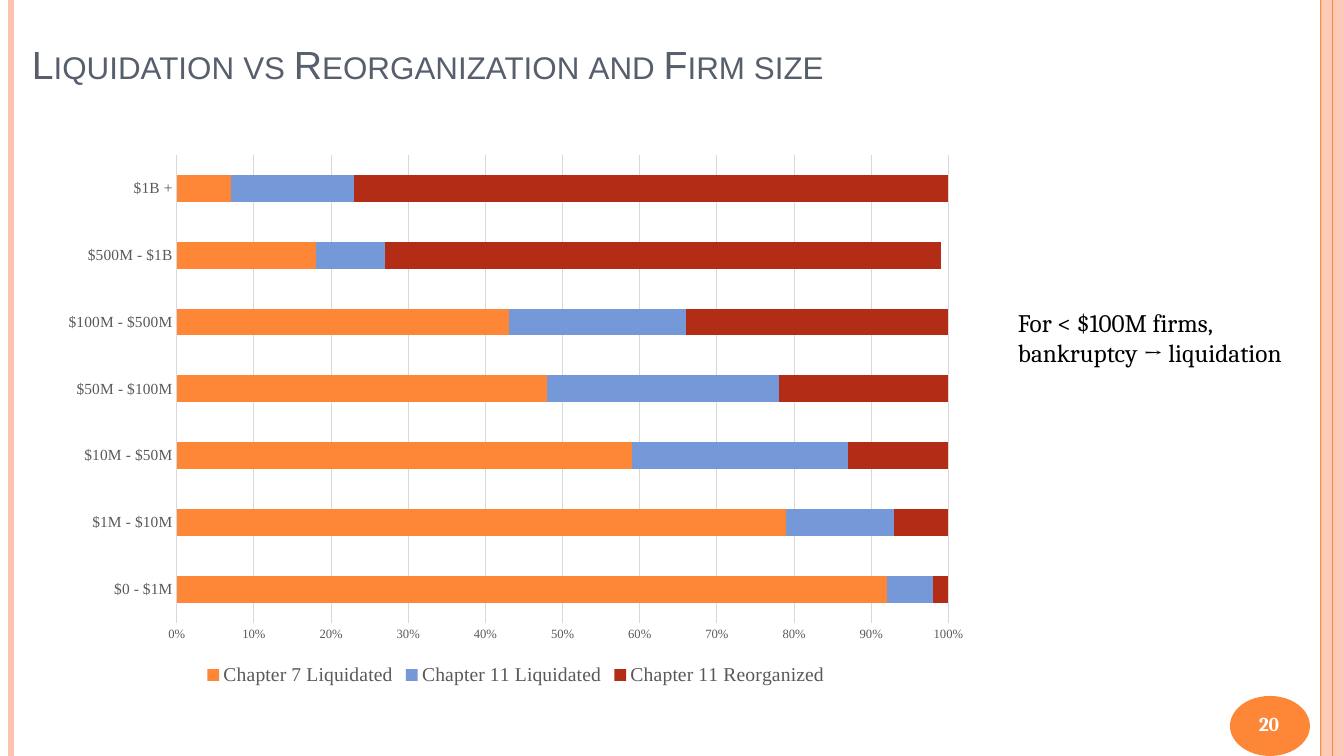
from lxml import etree
from pptx import Presentation
from pptx.chart.data import CategoryChartData
from pptx.dml.color import RGBColor
from pptx.enum.chart import XL_CHART_TYPE, XL_LEGEND_POSITION, XL_TICK_MARK
from pptx.enum.shapes import MSO_CONNECTOR, MSO_SHAPE
from pptx.enum.text import MSO_ANCHOR, PP_ALIGN
from pptx.oxml import parse_xml
from pptx.oxml.ns import nsdecls, qn
from pptx.util import Pt

STACKED = XL_CHART_TYPE.BAR_STACKED
BOTTOM = XL_LEGEND_POSITION.BOTTOM
NO_TICK = XL_TICK_MARK.NONE
STRAIGHT = MSO_CONNECTOR.STRAIGHT
RECT, OVAL = MSO_SHAPE.RECTANGLE, MSO_SHAPE.OVAL
TOP, MIDDLE, LOW = MSO_ANCHOR.TOP, MSO_ANCHOR.MIDDLE, MSO_ANCHOR.BOTTOM
LEFT, CENTER = PP_ALIGN.LEFT, PP_ALIGN.CENTER

ORANGE = RGBColor(0xFE, 0x86, 0x37)
PEACH = RGBColor(0xFE, 0xC3, 0xAE)
BLUE = RGBColor(0x75, 0x98, 0xD9)
RED = RGBColor(0xB3, 0x2C, 0x16)
SLATE = RGBColor(0x57, 0x5F, 0x6D)
GRAY = RGBColor(0x59, 0x59, 0x59)
SILVER = RGBColor(0xD9, 0xD9, 0xD9)
BLACK = RGBColor(0, 0, 0)
WHITE = RGBColor(0xFF, 0xFF, 0xFF)

WIDTH, HEIGHT = 1344, 756
SCALE = 914400 / 100.8
SERIF = "Times New Roman"

SIZES = ["$0 - $1M", "$1M - $10M", "$10M - $50M", "$50M - $100M",
         "$100M - $500M", "$500M - $1B", "$1B +"]
SHARES = [
    ("Chapter 7 Liquidated", ORANGE, [0.92, 0.79, 0.59, 0.48, 0.43, 0.18, 0.07]),
    ("Chapter 11 Liquidated", BLUE, [0.06, 0.14, 0.28, 0.3, 0.23, 0.09, 0.16]),
    ("Chapter 11 Reorganized", RED, [0.03, 0.07, 0.13, 0.22, 0.34, 0.72, 0.77]),
]
PLOT = {"x": 0.136, "y": 0.02, "w": 0.828, "h": 0.857}


def px(*nums):
    return [round(num * SCALE) for num in nums]


def style(font, size, color, name):
    font.size = Pt(size)
    font.color.rgb = color
    font.name = name


def add_text(slide, box, text, size=18, color=BLACK, font="Cambria", bold=False,
             caps=False, align=LEFT, anchor=TOP):
    frame = slide.shapes.add_textbox(*px(*box)).text_frame
    frame.word_wrap = True
    frame.vertical_anchor = anchor
    para = frame.paragraphs[0]
    para.alignment = align
    run = para.add_run()
    run.text = text
    style(run.font, size, color, font)
    run.font.bold = bold
    if caps:
        run.font._element.set("cap", "small")


def add_rule(slide, x, color, width):
    rule = slide.shapes.add_connector(STRAIGHT, *px(x, 0, x, HEIGHT))
    rule.line.color.rgb = color
    rule.line.width = Pt(width)
    etree.SubElement(rule._element.spPr, qn("a:effectLst"))


def add_block(slide, kind, box, color, alpha=100):
    block = slide.shapes.add_shape(kind, *px(*box))
    block.shadow.inherit = False
    block.fill.solid()
    block.fill.fore_color.rgb = color
    block.line.fill.background()
    if alpha < 100:
        tint = block._element.spPr.find(".//" + qn("a:srgbClr"))
        etree.SubElement(tint, qn("a:alpha"), val=str(alpha * 1000))


def set_line(line, color):
    line.color.rgb = color
    line.width = Pt(0.75)


def set_axis(axis, size):
    axis.major_tick_mark = NO_TICK
    axis.minor_tick_mark = NO_TICK
    style(axis.tick_labels.font, size, GRAY, SERIF)


def place_plot(chart):
    area = chart._chartSpace.chart.plotArea
    for old in area.findall(qn("c:layout")):
        area.remove(old)
    spots = "".join(f'<c:{key} val="{val}"/>' for key, val in PLOT.items())
    area.insert(0, parse_xml(
        f'<c:layout {nsdecls("c")}><c:manualLayout><c:layoutTarget val="inner"/>'
        '<c:xMode val="edge"/><c:yMode val="edge"/>'
        f'{spots}</c:manualLayout></c:layout>'))


def add_bars(slide, box):
    data = CategoryChartData(number_format="0%")
    data.categories = SIZES
    for name, _, shares in SHARES:
        data.add_series(name, shares)
    chart = slide.shapes.add_chart(STACKED, *px(*box), data).chart
    style(chart.font, 10, BLACK, "Cambria")
    chart.has_title = False
    chart.has_legend = True
    chart.legend.position = BOTTOM
    chart.legend.include_in_layout = False
    style(chart.legend.font, 14, GRAY, SERIF)

    plot = chart.plots[0]
    plot.gap_width = 150
    plot.overlap = 100
    plot.vary_by_categories = False
    for bar, (_, color, _) in zip(plot.series, SHARES):
        bar.format.fill.solid()
        bar.format.fill.fore_color.rgb = color

    set_axis(chart.category_axis, 11)
    set_line(chart.category_axis.format.line, SILVER)
    scale = chart.value_axis
    set_axis(scale, 9)
    scale.minimum_scale = 0
    scale.maximum_scale = 1
    scale.major_unit = 0.1
    scale.tick_labels.number_format = "0%"
    scale.tick_labels.number_format_is_linked = False
    scale.format.line.fill.background()
    scale.has_major_gridlines = True
    set_line(scale.major_gridlines.format.line, SILVER)
    place_plot(chart)


def main():
    deck = Presentation()
    deck.slide_width, deck.slide_height = px(WIDTH, HEIGHT)
    slide = deck.slides.add_slide(deck.slide_layouts[6])

    add_rule(slide, 11, PEACH, 4.5)
    add_rule(slide, 1321, ORANGE, 1.5)
    add_block(slide, RECT, (1321, 0, 23, HEIGHT), PEACH, alpha=87)
    add_rule(slide, 1333, ORANGE, 0.75)
    add_block(slide, OVAL, (1230, 696, 80, 60), ORANGE)

    add_text(slide, (22, 13, 1277, 79), "Liquidation vs Reorganization and Firm size",
             size=28, color=SLATE, font="Arial", caps=True, anchor=LOW)
    add_text(slide, (1224, 695, 90, 58), "20", size=14, color=WHITE, bold=True,
             align=CENTER, anchor=MIDDLE)
    add_bars(slide, (50, 144, 932, 546))
    add_text(slide, (1008, 302, 291, 102),
             "For < $100M firms, bankruptcy → liquidation")
    deck.save("out.pptx")


if __name__ == "__main__":
    main()
